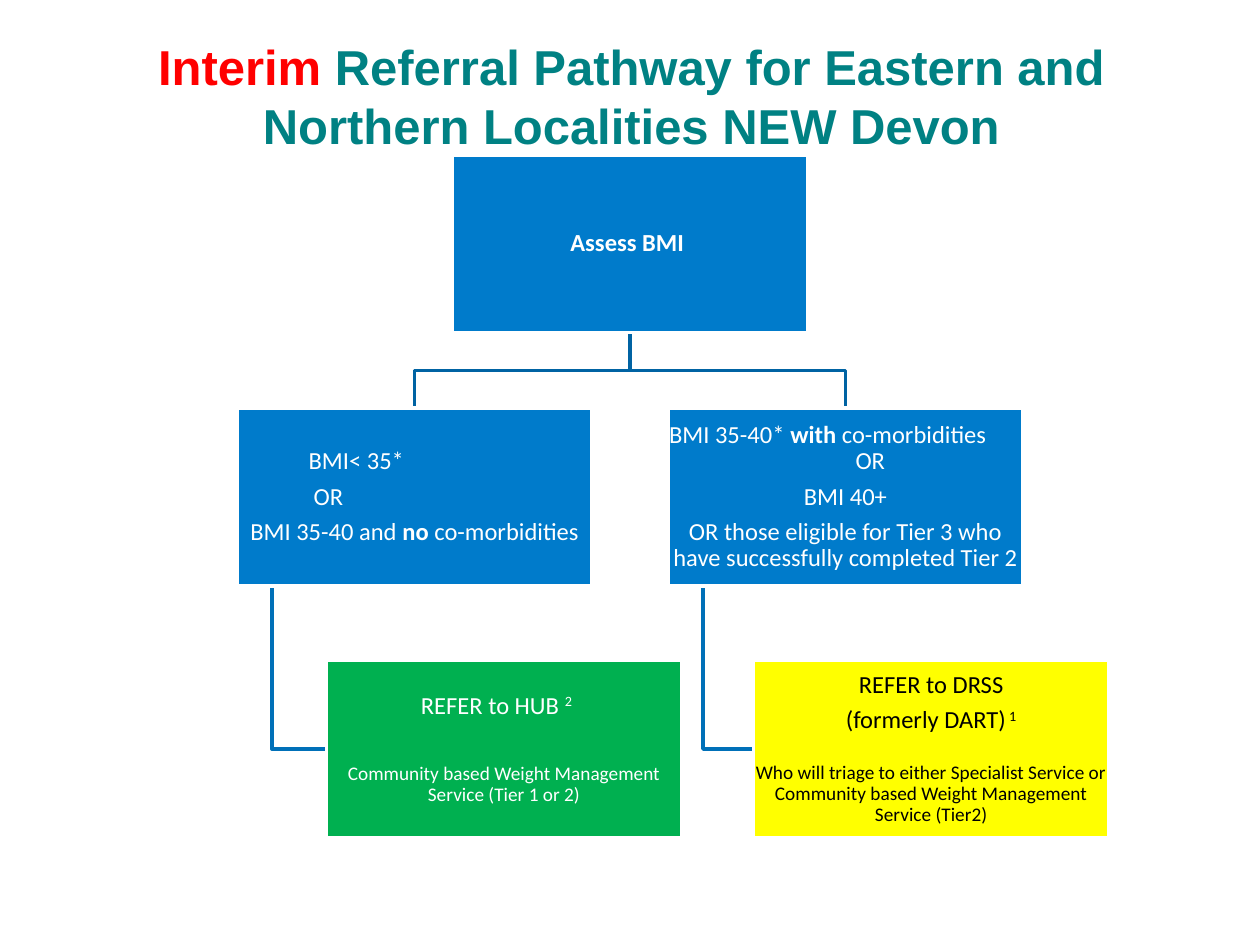
from pptx import Presentation
from pptx.dml.color import RGBColor as Rgb
from pptx.enum.shapes import MSO_SHAPE as Shape
from pptx.enum.text import MSO_ANCHOR as Anchor, MSO_AUTO_SIZE as Fit, PP_ALIGN as Align
from pptx.util import Inches, Pt

HUES = {"red": "FF0000", "teal": "008183", "blue": "007BCB", "green": "00B050",
        "yellow": "FFFF00", "white": "FFFFFF", "black": "000000",
        "branch": "0063A3", "drop": "0070B8"}
WIDE, HIGH = 2.82, 1.41
TOPS = [1.23, 3.24, 5.24]
ROOT, LOW, MID = 3.59, 1.88, 5.3
HUB, DRSS = 2.59, 5.98


class Chart:
    def __init__(self, slide):
        self.slide = slide

    def hue(self, name):
        return Rgb.from_string(HUES[name])

    def run(self, para, text, size, color, font="Calibri", bold=False, raised=False):
        run = para.add_run()
        run.text = text
        face = run.font
        face.name, face.size, face.bold = font, Pt(size), bold
        face.color.rgb = self.hue(color)
        if raised:
            face._element.set("baseline", "30000")

    def title(self, *runs):
        head = self.slide.shapes.title
        head.left, head.top = Inches(0.51), Inches(0.13)
        head.width, head.height = Inches(9), Inches(1.25)
        frame = head.text_frame
        frame.auto_size, frame.vertical_anchor = Fit.NONE, Anchor.MIDDLE
        para = frame.paragraphs[0]
        para.alignment = Align.CENTER
        for text, color in runs:
            self.run(para, text, 28, color, font="Arial", bold=True)

    def line(self, color, *points):
        """Draw an open bent line through the points, in inches."""
        spots = [(Inches(x), Inches(y)) for x, y in points]
        form = self.slide.shapes.build_freeform(*spots[0])
        form.add_line_segments(spots[1:], close=False)
        shape = form.convert_to_shape()
        shape.shadow.inherit = False
        shape.fill.background()
        shape.line.color.rgb = self.hue(color)
        shape.line.width = Pt(2)

    def box(self, left, top, fill, paras, ink="white"):
        """Draw a step; each para is (runs, format), each run (text, style)."""
        shape = self.slide.shapes.add_shape(
            Shape.RECTANGLE, Inches(left), Inches(top), Inches(WIDE), Inches(HIGH))
        shape.shadow.inherit = False
        shape.fill.solid()
        shape.fill.fore_color.rgb = self.hue(fill)
        shape.line.color.rgb = self.hue("white")
        shape.line.width = Pt(2)
        frame = shape.text_frame
        frame.word_wrap, frame.vertical_anchor = True, Anchor.MIDDLE
        frame.margin_left = frame.margin_right = Inches(0.01)
        frame.margin_top = frame.margin_bottom = Inches(0.01)
        for i, (runs, form) in enumerate(paras):
            para = frame.add_paragraph() if i else frame.paragraphs[0]
            self.para(para, runs, ink, **form)

    def para(self, para, runs, ink, size=14, after=4.9, indent=None):
        para.alignment = Align.CENTER if indent is None else Align.LEFT
        if indent:
            para._p.get_or_add_pPr().set("marL", str(Inches(indent)))
        para.line_spacing = 0.9
        para.space_after = Pt(after)
        for text, style in runs:
            self.run(para, text, size, ink, **style)


def plain(text, **form):
    return [(text, {})], form


def main():
    deck = Presentation()
    deck.slide_width, deck.slide_height = Inches(10), Inches(7.5)
    chart = Chart(deck.slides.add_slide(deck.slide_layouts[5]))
    bold, raised = {"bold": True}, {"raised": True}

    chart.title(("Interim", "red"),
                (" Referral Pathway for Eastern and Northern Localities NEW Devon", "teal"))

    start, fork = ROOT + WIDE / 2, TOPS[0] + HIGH + 0.3
    for left, end in ((MID, DRSS), (LOW, HUB)):
        stem, mid = left + 0.28, left + WIDE / 2
        turn = TOPS[2] + HIGH / 2
        chart.line("drop", (stem, TOPS[1] + HIGH), (stem, turn), (end, turn))
        chart.line("branch", (start, TOPS[0] + HIGH), (start, fork), (mid, fork), (mid, TOPS[1]))

    chart.box(ROOT, TOPS[0], "blue", [([("Assess BMI ", bold)], {})])
    chart.box(LOW, TOPS[1], "blue", [
        plain("BMI< 35*", indent=0.56),
        plain("OR", indent=0.6),
        ([("BMI 35-40 and ", {}), ("no", bold), (" co-morbidities", {})], {})])
    chart.box(HUB, TOPS[2], "green", [
        ([("REFER to HUB ", {}), ("2", raised)], {"after": 25.2, "indent": 0.74}),
        plain("Community based Weight Management Service (Tier 1 or 2)", size=11)])
    chart.box(MID, TOPS[1], "blue", [
        ([("BMI 35-40* ", {}), ("with", bold), (" co-morbidities", {})],
         {"after": 0, "indent": 0}),
        plain("OR", indent=1.48),
        plain("BMI 40+"),
        plain("OR those eligible for Tier 3 who have successfully completed Tier 2")])
    chart.box(DRSS, TOPS[2], "yellow", [
        plain("REFER to DRSS"),
        ([("(formerly DART)", {}), (" 1", raised)], {"after": 16.5}),
        plain("Who will triage to either Specialist Service or "
              "Community based Weight Management Service (Tier2)", size=11)], ink="black")

    deck.save("out.pptx")


if __name__ == "__main__":
    main()
